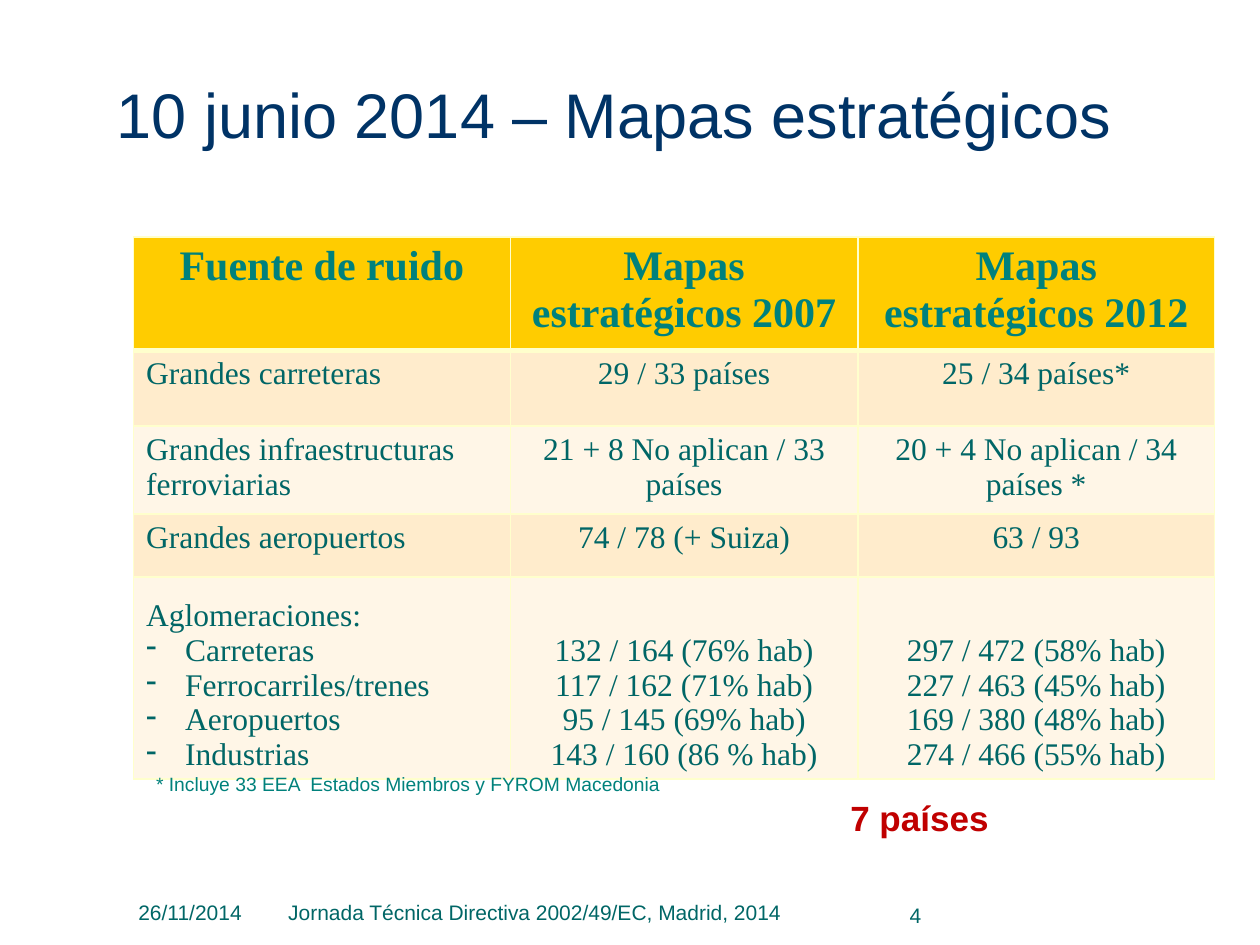
from lxml import etree
from pptx import Presentation
from pptx.dml.color import RGBColor
from pptx.enum.text import MSO_ANCHOR, PP_ALIGN
from pptx.oxml.ns import qn
from pptx.util import Inches, Pt

LEFT, CENTER, RIGHT = PP_ALIGN.LEFT, PP_ALIGN.CENTER, PP_ALIGN.RIGHT
TOP, BOTTOM = MSO_ANCHOR.TOP, MSO_ANCHOR.BOTTOM
SANS, SERIF = "Arial", "Times New Roman"
NAVY, TEAL, DARK_TEAL, RED = "003366", "00817C", "006666", "C00000"
GOLD, CREAM, BANDS = "FFCC00", "FFFFCC", ("FFECCC", "FFF6E7")

COLUMN_WIDTHS = (2.99, 2.76, 2.83)
ROW_HEIGHTS = (0.83, 0.6, 0.65, 0.5, 1.5)
ROWS = (
    ("Fuente de ruido", "Mapas estratégicos 2007", "Mapas estratégicos 2012"),
    ("Grandes carreteras", "29 / 33 países", "25 / 34 países*"),
    ("Grandes infraestructuras ferroviarias", "21 + 8 No aplican / 33 países",
     "20 + 4 No aplican / 34 países *"),
    ("Grandes aeropuertos", "74 / 78 (+ Suiza)", "63 / 93"),
    ("Aglomeraciones:\nCarreteras\nFerrocarriles/trenes\nAeropuertos\nIndustrias",
     "132 / 164 (76% hab)\n117 / 162 (71% hab)\n95 / 145 (69% hab)\n143 / 160 (86 % hab)",
     "297 / 472 (58% hab)\n227 / 463 (45% hab)\n169 / 380 (48% hab)\n274 / 466 (55% hab)"),
)


def rgb(color):
    """Turn a hex string into a colour."""
    return RGBColor.from_string(color)


def style_text(tf, size, color, font, align=LEFT, bold=False):
    """Format every paragraph of a text frame alike."""
    for p in tf.paragraphs:
        p.alignment = align
        for r in p.runs:
            r.font.size, r.font.name, r.font.bold = Pt(size), font, bold
            r.font.color.rgb = rgb(color)


def add_text(slide, box, text, size, color, align=LEFT, anchor=TOP, bold=False):
    """Place a wrapped text box in a box given in inches."""
    tf = slide.shapes.add_textbox(*map(Inches, box)).text_frame
    tf.word_wrap = True
    tf.vertical_anchor = anchor
    tf.text = text
    style_text(tf, size, color, SANS, align, bold)


def add_dash(p):
    """Give a paragraph a hanging dash bullet."""
    pPr = p._p.get_or_add_pPr()
    pPr.set("marL", str(Inches(0.31)))
    pPr.set("indent", str(-Inches(0.31)))
    etree.SubElement(pPr, qn("a:buChar"), char="-")


def set_borders(cell, top, bottom):
    """Draw the four cell borders, with top and bottom widths in points."""
    tcPr = cell._tc.get_or_add_tcPr()
    for side, width in (("L", 1), ("R", 1), ("T", top), ("B", bottom)):
        ln = etree.SubElement(tcPr, qn(f"a:ln{side}"), w=str(Pt(width)))
        fill = etree.SubElement(ln, qn("a:solidFill"))
        etree.SubElement(fill, qn("a:srgbClr"), val=CREAM)


def add_noise_table(slide, box):
    """Place the table of noise sources and strategic maps."""
    table = slide.shapes.add_table(len(ROWS), len(COLUMN_WIDTHS), *map(Inches, box)).table
    for column, width in zip(table.columns, COLUMN_WIDTHS):
        column.width = Inches(width)
    for i, (row, height, texts) in enumerate(zip(table.rows, ROW_HEIGHTS, ROWS)):
        row.height = Inches(height)
        for j, (cell, text) in enumerate(zip(row.cells, texts)):
            header = i == 0
            set_borders(cell, 3 if i == 1 else 1, 3 if header else 1)
            cell.fill.solid()
            cell.fill.fore_color.rgb = rgb(GOLD if header else BANDS[(i - 1) % 2])
            tf = cell.text_frame
            tf.text = text
            if "\n" in text:
                cell.vertical_anchor = BOTTOM
            if j == 0:
                for p in tf.paragraphs[1:]:
                    add_dash(p)
            align = CENTER if header or j else LEFT
            style_text(tf, 24 if header else 18, TEAL if header else DARK_TEAL,
                       SERIF, align, header)


def add_footer(slide, left, top):
    """Place the date, event name and page number in one row."""
    parts = (
        (1.17, 0.31, "26/11/2014", LEFT, 0),
        (4.15, 0.31, "Jornada Técnica Directiva 2002/49/EC, Madrid, 2014", CENTER, 1.17),
        (0.83, 0.33, "4", RIGHT, 5.58),
    )
    for width, height, text, align, offset in parts:
        add_text(slide, (left + offset, top, width, height), text, 12, DARK_TEAL, align, BOTTOM)


def main():
    """Build the slide and save it."""
    prs = Presentation()
    prs.slide_width, prs.slide_height = Inches(10), Inches(7.5)
    slide = prs.slides.add_slide(prs.slide_layouts[6])
    add_text(slide, (0.83, 0.22, 8.5, 1.03), "10 junio 2014 – Mapas estratégicos",
             36, NAVY, anchor=BOTTOM)
    add_noise_table(slide, (1.06, 1.88, sum(COLUMN_WIDTHS), sum(ROW_HEIGHTS)))
    add_text(slide, (1.14, 6.08, 8.27, 0.29),
             "* Incluye 33 EEA  Estados Miembros y FYROM Macedonia", 11, TEAL)
    add_text(slide, (6.65, 6.27, 1.85, 0.44), "7 países", 20, RED, bold=True)
    add_footer(slide, 1, 7.08)
    prs.save("out.pptx")


if __name__ == "__main__":
    main()
